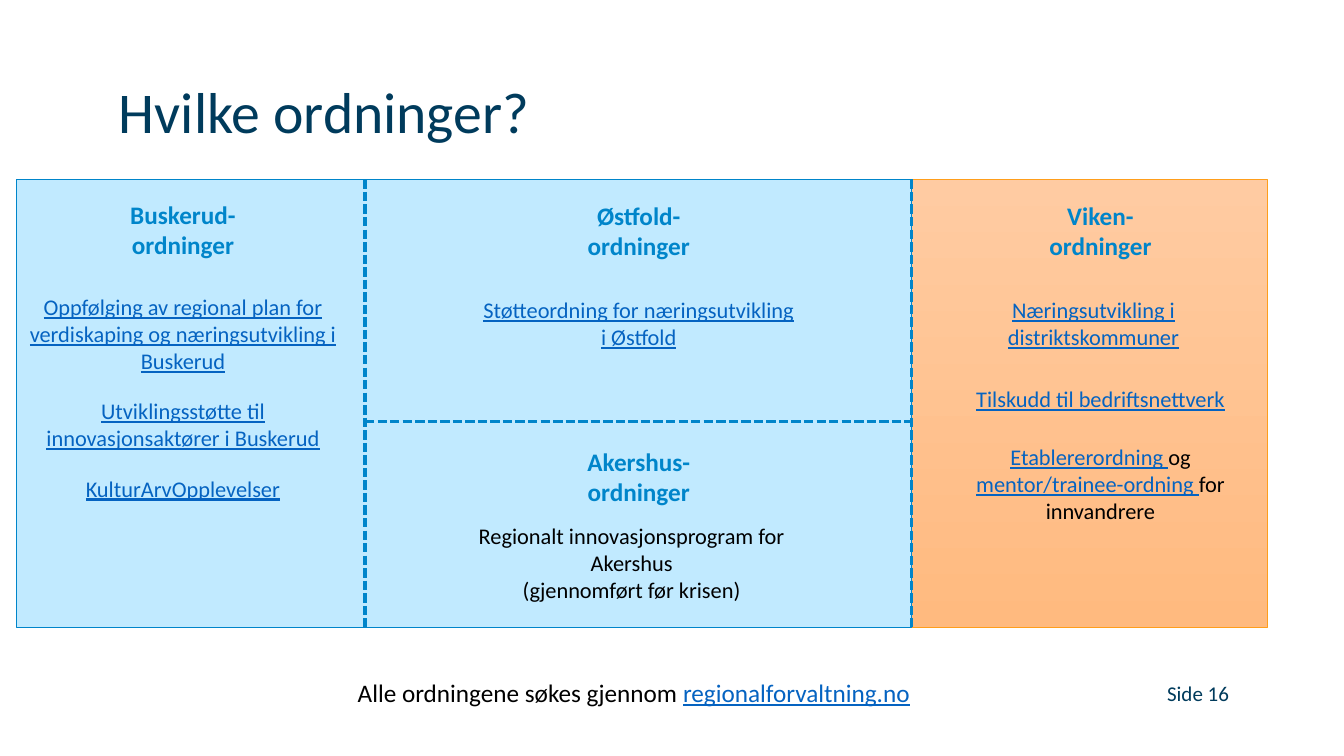
"""Build the slide with the regional funding schemes."""
from dataclasses import dataclass

from lxml import etree
from pptx import Presentation
from pptx.dml.color import RGBColor
from pptx.enum.dml import MSO_LINE
from pptx.enum.shapes import MSO_CONNECTOR, MSO_SHAPE
from pptx.enum.text import MSO_ANCHOR, MSO_AUTO_SIZE, PP_ALIGN
from pptx.oxml.ns import qn
from pptx.shapes.autoshape import Shape
from pptx.slide import Slide
from pptx.util import Emu, Pt

STRAIGHT = MSO_CONNECTOR.STRAIGHT
RECTANGLE = MSO_SHAPE.RECTANGLE
SYS_DASH = MSO_LINE.SQUARE_DOT
MIDDLE, TOP = MSO_ANCHOR.MIDDLE, MSO_ANCHOR.TOP
GROW, FIXED = MSO_AUTO_SIZE.SHAPE_TO_FIT_TEXT, MSO_AUTO_SIZE.NONE
LEFT, CENTER, RIGHT = PP_ALIGN.LEFT, PP_ALIGN.CENTER, PP_ALIGN.RIGHT

EMU_PER_PX = 9144
FONT = "Calibri"
NAVY, BLUE, LINK, BLACK = "003B5C", "0085CA", "0563C1", "000000"
PALE_BLUE, ORANGE = "C1EAFF", "FF9E1B"
PEACH_TOP, PEACH_BOTTOM = "FFCBA2", "FFBA7F"

PANEL_LEFT, PANEL_TOP, PANEL_HEIGHT = 16, 178, 444
BUSKERUD_EDGE, VIKEN_EDGE, PANEL_RIGHT = 362, 904, 1257
PANEL_BOTTOM = PANEL_TOP + PANEL_HEIGHT
AKERSHUS_TOP = 418
SCHEME_WIDTH = 331


@dataclass(frozen=True)
class Run:
    """A stretch of text in one colour."""
    text: str
    color: str = LINK
    underline: bool = True


@dataclass(frozen=True)
class Label:
    """A text box whose paragraphs are tuples of runs."""
    left: int
    top: int
    width: int
    height: int
    paragraphs: tuple[tuple[Run, ...], ...]
    size: float = 16
    bold: bool = False
    align: PP_ALIGN = CENTER
    flush: bool = False


@dataclass(frozen=True)
class Divider:
    """A dashed line between two areas."""
    x1: int
    y1: int
    x2: int
    y2: int


def plain(text: str, color: str = BLACK) -> Run:
    """Return a run that is not underlined."""
    return Run(text, color, False)


def heading(left: int, top: int, width: int, *lines: str) -> Label:
    """Return the heading of one area."""
    paragraphs = tuple((plain(line, BLUE),) for line in lines)
    return Label(left, top, width, 71, paragraphs, size=18, bold=True)


def scheme(left: int, top: int, height: int, *runs: Run) -> Label:
    """Return the description of one scheme."""
    return Label(left, top, SCHEME_WIDTH, height, (runs,))


DIVIDERS = (
    Divider(BUSKERUD_EDGE, PANEL_TOP, BUSKERUD_EDGE, PANEL_BOTTOM),
    Divider(VIKEN_EDGE, PANEL_TOP, VIKEN_EDGE, PANEL_BOTTOM),
    Divider(BUSKERUD_EDGE, AKERSHUS_TOP, VIKEN_EDGE, AKERSHUS_TOP),
)

LABELS = (
    Label(118, 75, 1102, 69, ((plain("Hvilke ordninger?", NAVY),),),
          size=41.2, align=LEFT, flush=True),
    Label(919, 675, 300, 25, ((plain("Side 16", NAVY),),),
          size=15, align=RIGHT, flush=True),
    heading(112, 193, 139, "Buskerud-\nordninger"),
    heading(564, 194, 139, "Østfold-\nordninger"),
    heading(564, 438, 139, "Akershus-\nordninger"),
    heading(998, 194, 187, "Viken-", "ordninger"),
    scheme(16, 286, 91, Run("Oppfølging av regional plan for verdiskaping "
                            "og næringsutvikling i Buskerud")),
    scheme(16, 389, 64,
           Run("Utviklingsstøtte til innovasjonsaktører i Buskerud")),
    scheme(16, 466, 37, Run("KulturArvOpplevelser")),
    scheme(468, 289, 64, Run("Støtteordning for næringsutvikling i Østfold")),
    scheme(461, 513, 91, plain("Regionalt innovasjonsprogram for Akershus\n"
                               "(gjennomført før krisen)")),
    scheme(919, 289, 64, Run("Næringsutvikling i distriktskommuner")),
    scheme(926, 377, 37, Run("Tilskudd til bedriftsnettverk")),
    scheme(926, 435, 91, Run("Etablererordning "), plain("og "),
           Run("mentor/trainee-ordning "), plain("for innvandrere")),
    Label(345, 667, 800, 40, ((plain("Alle ordningene søkes gjennom "),
                               Run("regionalforvaltning.no")),),
          size=18, align=LEFT),
)


def px(length: int) -> Emu:
    """Convert px to EMU."""
    return Emu(length * EMU_PER_PX)


def rgb(color: str) -> RGBColor:
    """Turn a hex string into a colour."""
    return RGBColor.from_string(color)


def draw_panel(slide: Slide, left: int, right: int, outline: str) -> Shape:
    """Draw an outlined panel between two x positions."""
    panel = slide.shapes.add_shape(RECTANGLE, px(left), px(PANEL_TOP),
                                   px(right - left), px(PANEL_HEIGHT))
    panel.shadow.inherit = False
    panel.line.color.rgb = rgb(outline)
    panel.line.width = Pt(0.5)
    return panel


def draw_divider(slide: Slide, divider: Divider) -> None:
    """Draw one dashed divider."""
    dashes = slide.shapes.add_connector(STRAIGHT, px(divider.x1), px(divider.y1),
                                        px(divider.x2), px(divider.y2))
    dashes.line.color.rgb = rgb(BLUE)
    dashes.line.width = Pt(2.25)
    dashes.line.dash_style = SYS_DASH
    etree.SubElement(dashes._element.spPr, qn("a:effectLst"))


def draw_label(slide: Slide, label: Label) -> None:
    """Draw one text box run by run."""
    box = slide.shapes.add_textbox(px(label.left), px(label.top),
                                   px(label.width), px(label.height))
    frame = box.text_frame
    frame.word_wrap = True
    frame.auto_size = FIXED if label.flush else GROW
    frame.vertical_anchor = MIDDLE if label.flush else TOP
    if label.flush:
        frame.margin_left = frame.margin_right = 0
        frame.margin_top = frame.margin_bottom = 0
    for index, runs in enumerate(label.paragraphs):
        paragraph = frame.add_paragraph() if index else frame.paragraphs[0]
        paragraph.alignment = label.align
        for run in runs:
            for line_index, line in enumerate(run.text.split("\n")):
                if line_index:
                    paragraph.add_line_break()
                piece = paragraph.add_run()
                piece.text = line
                piece.font.name = FONT
                piece.font.size = Pt(label.size)
                piece.font.bold = label.bold
                piece.font.underline = run.underline
                piece.font.color.rgb = rgb(run.color)


def main() -> None:
    """Build and save the slide."""
    deck = Presentation()
    deck.slide_width, deck.slide_height = px(1333), px(750)
    slide = deck.slides.add_slide(deck.slide_layouts[6])

    viken = draw_panel(slide, VIKEN_EDGE, PANEL_RIGHT, ORANGE)
    viken.fill.gradient()
    viken.fill.gradient_angle = 270
    for stop, color in zip(viken.fill.gradient_stops, (PEACH_TOP, PEACH_BOTTOM)):
        stop.color.rgb = rgb(color)

    counties = draw_panel(slide, PANEL_LEFT, VIKEN_EDGE, BLUE)
    counties.fill.solid()
    counties.fill.fore_color.rgb = rgb(PALE_BLUE)

    for divider in DIVIDERS:
        draw_divider(slide, divider)
    for label in LABELS:
        draw_label(slide, label)
    deck.save("out.pptx")


if __name__ == "__main__":
    main()
